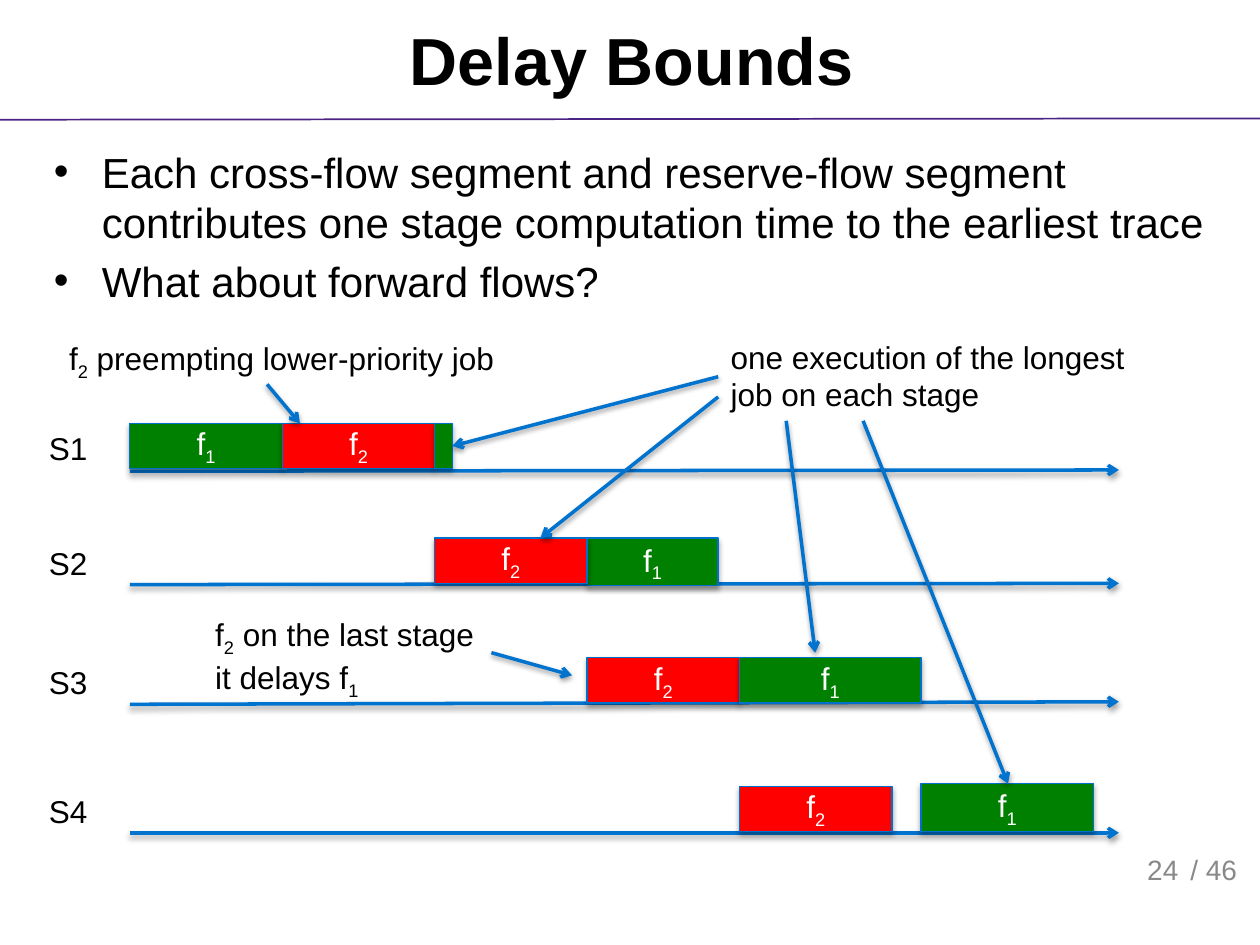
"""Build the "Delay Bounds" slide: four stage timelines with flow blocks and callouts."""
from dataclasses import dataclass

from lxml import etree
from pptx import Presentation
from pptx.dml.color import RGBColor
from pptx.enum.shapes import MSO_CONNECTOR, MSO_SHAPE
from pptx.enum.text import MSO_ANCHOR, MSO_AUTO_SIZE, PP_ALIGN
from pptx.oxml.ns import qn
from pptx.util import Pt

LEFT, CENTER, RIGHT = PP_ALIGN.LEFT, PP_ALIGN.CENTER, PP_ALIGN.RIGHT
TOP, MIDDLE, BOTTOM = MSO_ANCHOR.TOP, MSO_ANCHOR.MIDDLE, MSO_ANCHOR.BOTTOM
FIT_SHAPE = MSO_AUTO_SIZE.SHAPE_TO_FIT_TEXT
RECTANGLE = MSO_SHAPE.RECTANGLE
STRAIGHT = MSO_CONNECTOR.STRAIGHT
PX = 9144


@dataclass(frozen=True)
class Theme:
    font: str = "Arial"
    text: str = "000000"
    muted: str = "898989"
    block_text: str = "FFFFFF"
    rule: str = "4A2384"
    arrow: str = "0073CF"
    block_line: str = "0070CA"
    flow_1: str = "008000"
    flow_2: str = "FF0000"
    title_size: int = 38
    body_size: int = 24
    label_size: int = 18
    page_size: int = 16


THEME = Theme()
SUBSCRIPT_MARK = "~"
F1, F2 = "f~1~", "f~2~"

TITLE = "Delay Bounds"
BULLETS = [
    "Each cross-flow segment and reserve-flow segment contributes one stage"
    " computation time to the earliest trace",
    "What about forward flows?",
]
PAGE_PARTS = [("/ 46", 935, LEFT), ("24", 839, RIGHT)]

AXIS_LEFT, AXIS_RIGHT = 103, 888
STAGES = [
    ("S1", 336, (374, 373), [
        (F1, THEME.flow_1, (103, 336, 121, 36)),
        (F2, THEME.flow_2, (224, 336, 121, 36)),
        ("", THEME.flow_1, (345, 336, 14, 36)),
    ]),
    ("S2", 427, (464, 463), [
        (F1, THEME.flow_1, (466, 427, 104, 38)),
        (F2, THEME.flow_2, (345, 427, 121, 36)),
    ]),
    ("S3", 521, (559, 557), [
        (F2, THEME.flow_2, (466, 522, 121, 36)),
        (F1, THEME.flow_1, (587, 522, 144, 36)),
    ]),
    ("S4", 624, (661, 661), [
        (F2, THEME.flow_2, (587, 624, 121, 36)),
        (F1, THEME.flow_1, (731, 622, 137, 38)),
    ]),
]
CALLOUTS = [
    (["f~2~ on the last stage", "it delays f~1~"], (161, 483, 229, 71),
     [((390, 518), (454, 536))]),
    (["f~2~ preempting lower-priority job"], (45, 264, 362, 40),
     [((212, 305), (238, 336))]),
    (["one execution of the longest", "job on each stage"], (570, 263, 336, 71),
     [((570, 299), (359, 354)), ((570, 315), (429, 427)),
      ((624, 334), (647, 518)), ((685, 334), (800, 622))]),
]


def scaled(lengths):
    return [length * PX for length in lengths]


def write(shape, lines, size, color, align=LEFT, anchor=TOP, bold=False, wrap=True):
    frame = shape.text_frame
    frame.word_wrap = wrap
    frame.vertical_anchor = anchor
    for index, line in enumerate(lines):
        paragraph = frame.add_paragraph() if index else frame.paragraphs[0]
        paragraph.alignment = align
        for position, part in enumerate(line.split(SUBSCRIPT_MARK)):
            if not part:
                continue
            run = paragraph.add_run()
            run.text = part
            run.font.name = THEME.font
            run.font.size = Pt(size)
            run.font.bold = bold
            run.font.color.rgb = RGBColor.from_string(color)
            if position % 2:
                run.font._element.set("baseline", "-25000")
    return frame


def add_text(slide, box, lines, size, color=THEME.text, **options):
    return write(slide.shapes.add_textbox(*scaled(box)), lines, size, color, **options)


def add_label(slide, box, lines):
    add_text(slide, box, lines, THEME.label_size, wrap=False).auto_size = FIT_SHAPE


def add_effects(shape, distance=0, opacity=0):
    effects = etree.SubElement(shape._element.spPr, qn("a:effectLst"))
    if opacity:
        shadow = etree.SubElement(
            effects, qn("a:outerShdw"), blurRad=str(Pt(3.1)), dist=str(Pt(distance)),
            dir="5400000", rotWithShape="0")
        color = etree.SubElement(shadow, qn("a:srgbClr"), val="000000")
        etree.SubElement(color, qn("a:alpha"), val=str(opacity * 1000))


def add_line(slide, start, end, color, width):
    line = slide.shapes.add_connector(STRAIGHT, *scaled(start + end))
    line.line.color.rgb = RGBColor.from_string(color)
    line.line.width = Pt(width)
    return line


def add_arrow(slide, start, end):
    arrow = add_line(slide, start, end, THEME.arrow, 2)
    etree.SubElement(arrow._element.spPr.find(qn("a:ln")), qn("a:tailEnd"), type="arrow")
    add_effects(arrow, 1.6, 38)


def add_block(slide, text, fill, box):
    block = slide.shapes.add_shape(RECTANGLE, *scaled(box))
    block.fill.solid()
    block.fill.fore_color.rgb = RGBColor.from_string(fill)
    block.line.color.rgb = RGBColor.from_string(THEME.block_line)
    block.line.width = Pt(0.75)
    add_effects(block, 1.8, 35)
    write(block, [text], THEME.label_size, THEME.block_text, CENTER, MIDDLE)


def add_bullets(slide):
    frame = add_text(slide, (33, 111, 937, 562), BULLETS, THEME.body_size)
    for index, paragraph in enumerate(frame.paragraphs):
        properties = paragraph._element.get_or_add_pPr()
        properties.set("marL", str(38 * PX))
        properties.set("indent", str(-38 * PX))
        etree.SubElement(properties, qn("a:buFont"), typeface=THEME.font)
        etree.SubElement(properties, qn("a:buChar"), char="•")
        if index:
            paragraph.space_before = Pt(THEME.body_size * 0.2)


def main():
    presentation = Presentation()
    presentation.slide_width, presentation.slide_height = scaled((1000, 750))
    slide = presentation.slides.add_slide(presentation.slide_layouts[6])

    add_effects(add_line(slide, (0, 95), (1000, 94), THEME.rule, 1))
    add_text(slide, (33, 0, 937, 94), [TITLE], THEME.title_size,
             align=CENTER, anchor=MIDDLE, bold=True)
    add_bullets(slide)
    for text, left, align in PAGE_PARTS:
        add_text(slide, (left, 668, 106, 40), [text], THEME.page_size, THEME.muted,
                 align=align, anchor=BOTTOM)

    for name, top, (axis_start, axis_end), blocks in STAGES:
        add_arrow(slide, (AXIS_LEFT, axis_start), (AXIS_RIGHT, axis_end))
        add_label(slide, (29, top, 51, 40), [name])
        for block in blocks:
            add_block(slide, *block)
    for lines, box, arrows in CALLOUTS:
        add_label(slide, box, lines)
        for start, end in arrows:
            add_arrow(slide, start, end)

    presentation.save("out.pptx")


if __name__ == "__main__":
    main()
